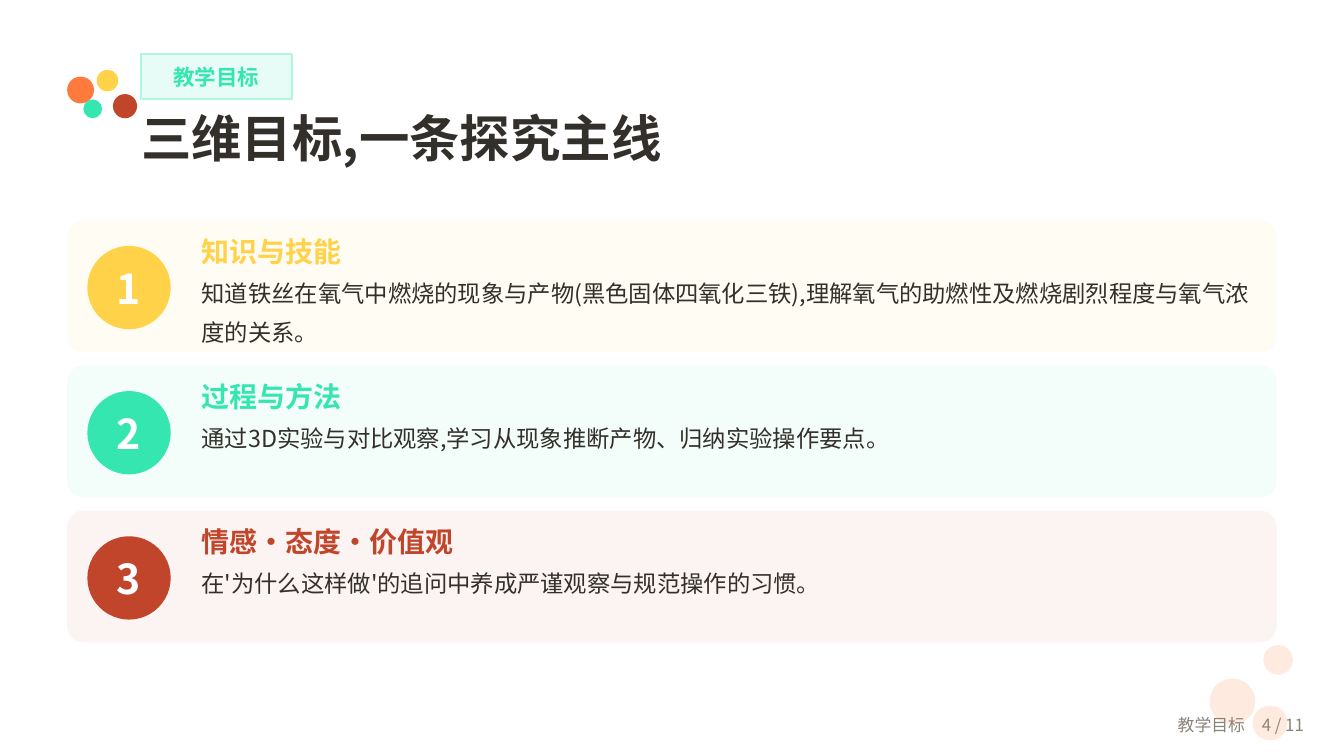
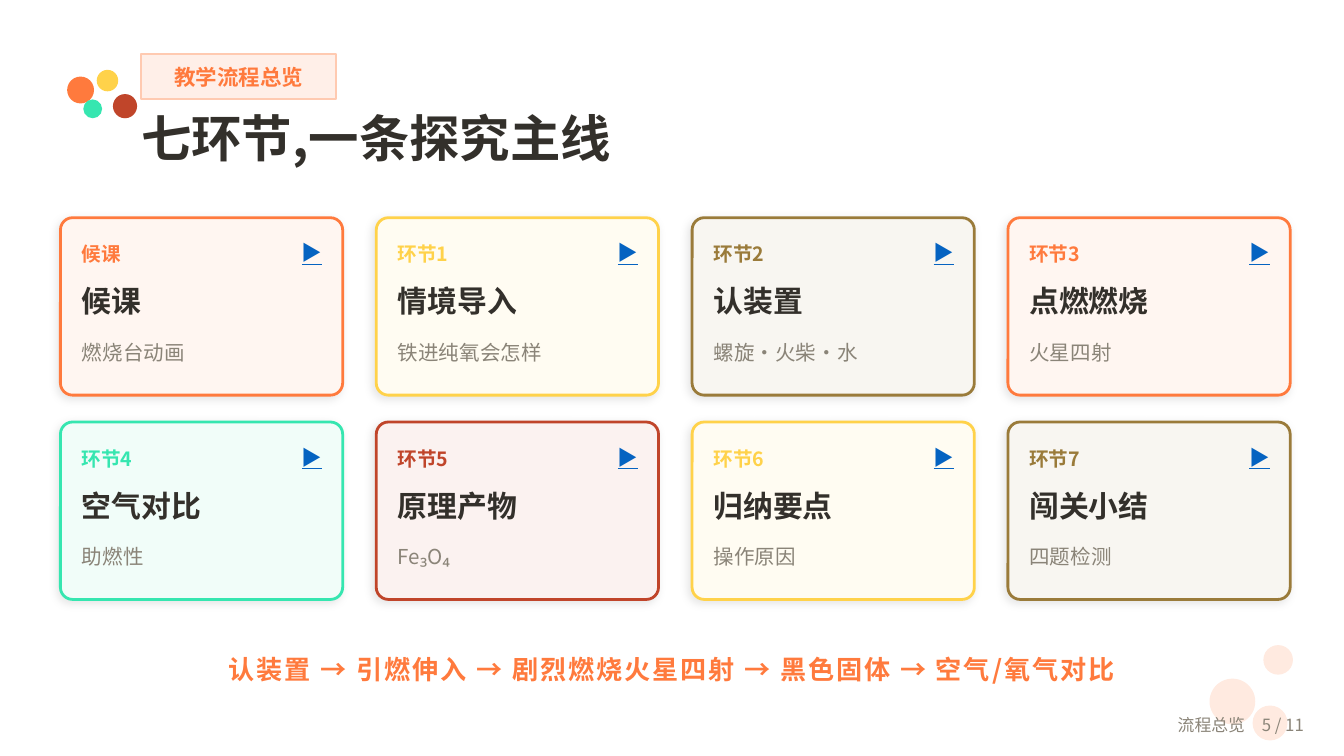
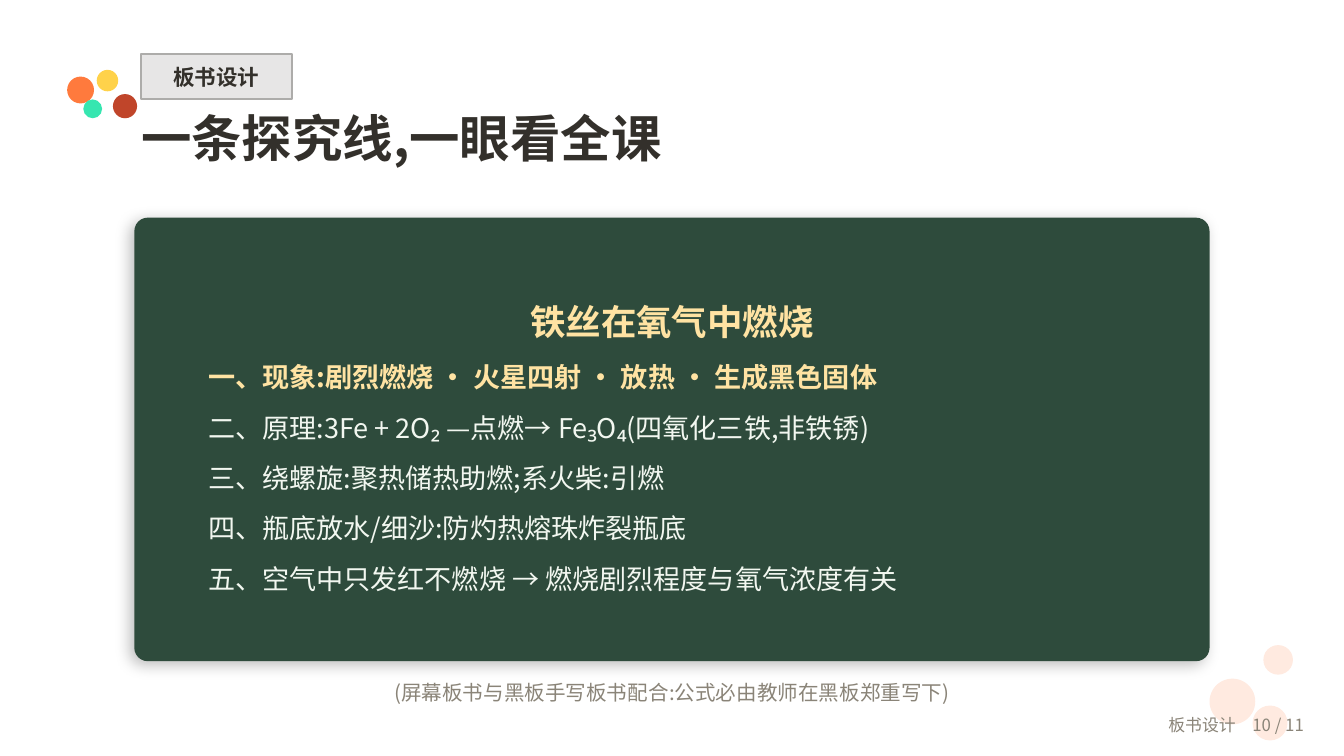
from dataclasses import dataclass

from lxml import etree
from pptx import Presentation
from pptx.dml.color import RGBColor
from pptx.enum.shapes import MSO_SHAPE
from pptx.enum.text import MSO_ANCHOR, MSO_AUTO_SIZE, PP_ALIGN
from pptx.oxml.ns import qn
from pptx.util import Emu, Inches, Pt

OVAL = MSO_SHAPE.OVAL
RECTANGLE = MSO_SHAPE.RECTANGLE
ROUNDED = MSO_SHAPE.ROUNDED_RECTANGLE
LEFT, CENTER, RIGHT = PP_ALIGN.LEFT, PP_ALIGN.CENTER, PP_ALIGN.RIGHT
TOP, MIDDLE = MSO_ANCHOR.TOP, MSO_ANCHOR.MIDDLE
NO_AUTOFIT = MSO_AUTO_SIZE.NONE

FONT = "Noto Sans CJK SC"
TITLE_ONLY = 5
PAGE_COUNT = 11

ORANGE = RGBColor(0xFF, 0x7A, 0x3D)
YELLOW = RGBColor(0xFF, 0xD2, 0x4A)
GREEN = RGBColor(0x36, 0xE6, 0xB0)
RED = RGBColor(0xC0, 0x45, 0x2A)
BROWN = RGBColor(0x9A, 0x7B, 0x3A)
INK = RGBColor(0x33, 0x30, 0x2B)
MUTED = RGBColor(0x8A, 0x84, 0x78)
PEACH = RGBColor(0xFF, 0xEA, 0xE0)
LINK_BLUE = RGBColor(0x05, 0x63, 0xC1)
WHITE = RGBColor(0xFF, 0xFF, 0xFF)
BOARD_GREEN = RGBColor(0x2E, 0x4B, 0x3C)
CHALK_YELLOW = RGBColor(0xFF, 0xE3, 0xA3)
CHALK_WHITE = RGBColor(0xF2, 0xF7, 0xF0)


@dataclass
class Dot:
    left: float
    top: float
    size: float
    color: RGBColor


@dataclass
class Line:
    text: str
    size: float
    color: RGBColor
    bold: bool = False
    align: PP_ALIGN = LEFT
    leading: float = 0
    tracking: float = 0
    underline: bool = False


@dataclass
class Shadow:
    opacity: int
    blur: float
    distance: float


@dataclass
class Header:
    tag: str
    tag_width: float
    color: RGBColor
    title: str
    footer: str
    number: int


@dataclass
class Goal:
    name: str
    detail: str
    color: RGBColor


@dataclass
class Stage:
    label: str
    name: str
    note: str
    color: RGBColor


DOTS = [
    Dot(9, 5.05, 0.34, PEACH),
    Dot(9.4, 4.8, 0.22, PEACH),
    Dot(9.32, 5.25, 0.26, PEACH),
    Dot(0.5, 0.57, 0.2, ORANGE),
    Dot(0.72, 0.52, 0.16, YELLOW),
    Dot(0.62, 0.74, 0.14, GREEN),
    Dot(0.84, 0.7, 0.18, RED),
]

GOALS = [
    Goal("知识与技能", "知道铁丝在氧气中燃烧的现象与产物(黑色固体四氧化三铁),"
         "理解氧气的助燃性及燃烧剧烈程度与氧气浓度的关系。", YELLOW),
    Goal("过程与方法", "通过3D实验与对比观察,学习从现象推断产物、归纳实验操作要点。", GREEN),
    Goal("情感·态度·价值观", "在'为什么这样做'的追问中养成严谨观察与规范操作的习惯。", RED),
]

STAGES = [
    Stage("候课", "候课", "燃烧台动画", ORANGE),
    Stage("环节1", "情境导入", "铁进纯氧会怎样", YELLOW),
    Stage("环节2", "认装置", "螺旋·火柴·水", BROWN),
    Stage("环节3", "点燃燃烧", "火星四射", ORANGE),
    Stage("环节4", "空气对比", "助燃性", GREEN),
    Stage("环节5", "原理产物", "Fe₃O₄", RED),
    Stage("环节6", "归纳要点", "操作原因", YELLOW),
    Stage("环节7", "闯关小结", "四题检测", BROWN),
]

BOARD_POINTS = [
    "二、原理:3Fe + 2O₂ —点燃→ Fe₃O₄(四氧化三铁,非铁锈)",
    "三、绕螺旋:聚热储热助燃;系火柴:引燃",
    "四、瓶底放水/细沙:防灼热熔珠炸裂瓶底",
    "五、空气中只发红不燃烧 → 燃烧剧烈程度与氧气浓度有关",
]


def tint(color: RGBColor, strength: float) -> RGBColor:
    return RGBColor(*(round(255 - (255 - channel) * strength) for channel in color))


def write(box, lines: list[Line], anchor=TOP, inset: bool = False) -> None:
    frame = box.text_frame
    frame.word_wrap = True
    frame.auto_size = NO_AUTOFIT
    frame.vertical_anchor = anchor
    if not inset:
        frame.margin_left = frame.margin_right = Inches(0)
        frame.margin_top = frame.margin_bottom = Inches(0)
    for index, line in enumerate(lines):
        para = frame.add_paragraph() if index else frame.paragraphs[0]
        para.text = line.text
        para.alignment = line.align
        if line.leading:
            para.line_spacing = Pt(line.leading)
        font = para.font
        font.name = FONT
        font.size = Pt(line.size)
        font.bold = line.bold
        font.color.rgb = line.color
        if line.underline:
            font.underline = True
        properties = para._p.pPr.find(qn("a:defRPr"))
        etree.SubElement(properties, qn("a:ea"), typeface=FONT)
        if line.tracking:
            properties.set("spc", str(round(line.tracking * 100)))


def add_text(page, left: float, top: float, width: float, height: float,
             lines: list[Line], anchor=MIDDLE, inset: bool = False) -> None:
    box = page.shapes.add_textbox(Inches(left), Inches(top), Inches(width), Inches(height))
    write(box, lines, anchor, inset)


def add_panel(page, kind, left: float, top: float, width: float, height: float,
              fill: RGBColor, line: RGBColor | None = None, weight: float = 1,
              radius: float = 0, shadow: Shadow | None = None):
    panel = page.shapes.add_shape(kind, Inches(left), Inches(top), Inches(width), Inches(height))
    panel.shadow.inherit = False
    panel.fill.solid()
    panel.fill.fore_color.rgb = fill
    if line is None:
        panel.line.fill.background()
    else:
        panel.line.color.rgb = line
        panel.line.width = Pt(weight)
    if radius:
        panel.adjustments[0] = radius / min(width, height)
    if shadow:
        effects = panel._element.spPr.find(qn("a:effectLst"))
        outer = etree.SubElement(
            effects, qn("a:outerShdw"), blurRad=str(Pt(shadow.blur)),
            dist=str(Pt(shadow.distance)), dir=str(135 * 60000),
            algn="bl", rotWithShape="0")
        black = etree.SubElement(outer, qn("a:srgbClr"), val="000000")
        etree.SubElement(black, qn("a:alpha"), val=str(shadow.opacity * 1000))
    return panel


def start_page(deck, header: Header):
    page = deck.slides.add_slide(deck.slide_layouts[TITLE_ONLY])
    for dot in DOTS:
        add_panel(page, OVAL, dot.left, dot.top, dot.size, dot.size, dot.color)
    tag = add_panel(page, RECTANGLE, 1.05, 0.4, header.tag_width, 0.34,
                    tint(header.color, 0.12), tint(header.color, 0.4))
    write(tag, [Line(header.tag, 11.5, header.color, True, CENTER)], MIDDLE)
    title = page.shapes.title
    title.left, title.top = Inches(1.05), Inches(0.8)
    title.width, title.height = Inches(8.4), Inches(0.55)
    write(title, [Line(header.title, 27, INK, True)])
    add_text(page, 8, 5.24, 1.8, 0.3,
             [Line(f"{header.footer}　{header.number} / {PAGE_COUNT}", 9, MUTED, align=RIGHT)],
             inset=True)
    return page


def build_goals(deck) -> None:
    page = start_page(deck, Header("教学目标", 1.12, GREEN, "三维目标,一条探究主线", "教学目标", 4))
    for index, goal in enumerate(GOALS):
        top = 1.64 + index * 1.08
        add_panel(page, ROUNDED, 0.5, top, 9, 0.98, tint(goal.color, 0.06), radius=0.12)
        badge = add_panel(page, OVAL, 0.65, top + 0.19, 0.62, 0.62, goal.color)
        write(badge, [Line(str(index + 1), 22, WHITE, True, CENTER)], MIDDLE)
        add_text(page, 1.5, top + 0.06, 7.85, 0.95, [
            Line(goal.name, 15, goal.color, True, leading=21),
            Line(goal.detail, 12.5, INK, leading=21),
        ], TOP)


def build_stages(deck) -> None:
    page = start_page(deck, Header("教学流程总览", 1.45, ORANGE, "七环节,一条探究主线", "流程总览", 5))
    for index, stage in enumerate(STAGES):
        row, column = divmod(index, 4)
        left, top = 0.45 + column * 2.35, 1.62 + row * 1.52
        add_panel(page, ROUNDED, left, top, 2.1, 1.32, tint(stage.color, 0.07),
                  stage.color, 1.5, 0.09, Shadow(10, 5, 2))
        text_left = left + 0.16
        add_text(page, text_left, top + 0.12, 1.2, 0.3,
                 [Line(stage.label, 10.5, stage.color, True)])
        add_text(page, left + 1.55, top + 0.1, 0.4, 0.32,
                 [Line("▶", 11, LINK_BLUE, align=RIGHT, underline=True)])
        add_text(page, text_left, top + 0.42, 1.8, 0.4, [Line(stage.name, 16, INK, True)])
        add_text(page, text_left, top + 0.85, 1.8, 0.3, [Line(stage.note, 11, MUTED)])
    summary = "认装置 → 引燃伸入 → 剧烈燃烧火星四射 → 黑色固体 → 空气/氧气对比"
    add_text(page, 0.5, 4.78, 9, 0.4,
             [Line(summary, 14, ORANGE, True, CENTER, tracking=1)], inset=True)


def build_board(deck) -> None:
    page = start_page(deck, Header("板书设计", 1.12, INK, "一条探究线,一眼看全课", "板书设计", 10))
    add_panel(page, ROUNDED, 1, 1.62, 8, 3.3, BOARD_GREEN, radius=0.1, shadow=Shadow(25, 8, 3))
    add_text(page, 1.45, 1.85, 7.1, 2.9, [
        Line("铁丝在氧气中燃烧", 19, CHALK_YELLOW, True, CENTER, 27),
        Line("一、现象:剧烈燃烧 · 火星四射 · 放热 · 生成黑色固体", 14.5, CHALK_YELLOW, True, leading=27),
        *(Line(point, 14.5, CHALK_WHITE, leading=27) for point in BOARD_POINTS),
    ], inset=True)
    add_text(page, 1, 5, 8, 0.3,
             [Line("(屏幕板书与黑板手写板书配合:公式必由教师在黑板郑重写下)", 11, MUTED, align=CENTER)],
             inset=True)


def main() -> None:
    deck = Presentation()
    deck.slide_width = Inches(10)
    deck.slide_height = Emu(Inches(5.625))
    build_goals(deck)
    build_stages(deck)
    build_board(deck)
    deck.save("out.pptx")


if __name__ == "__main__":
    main()
